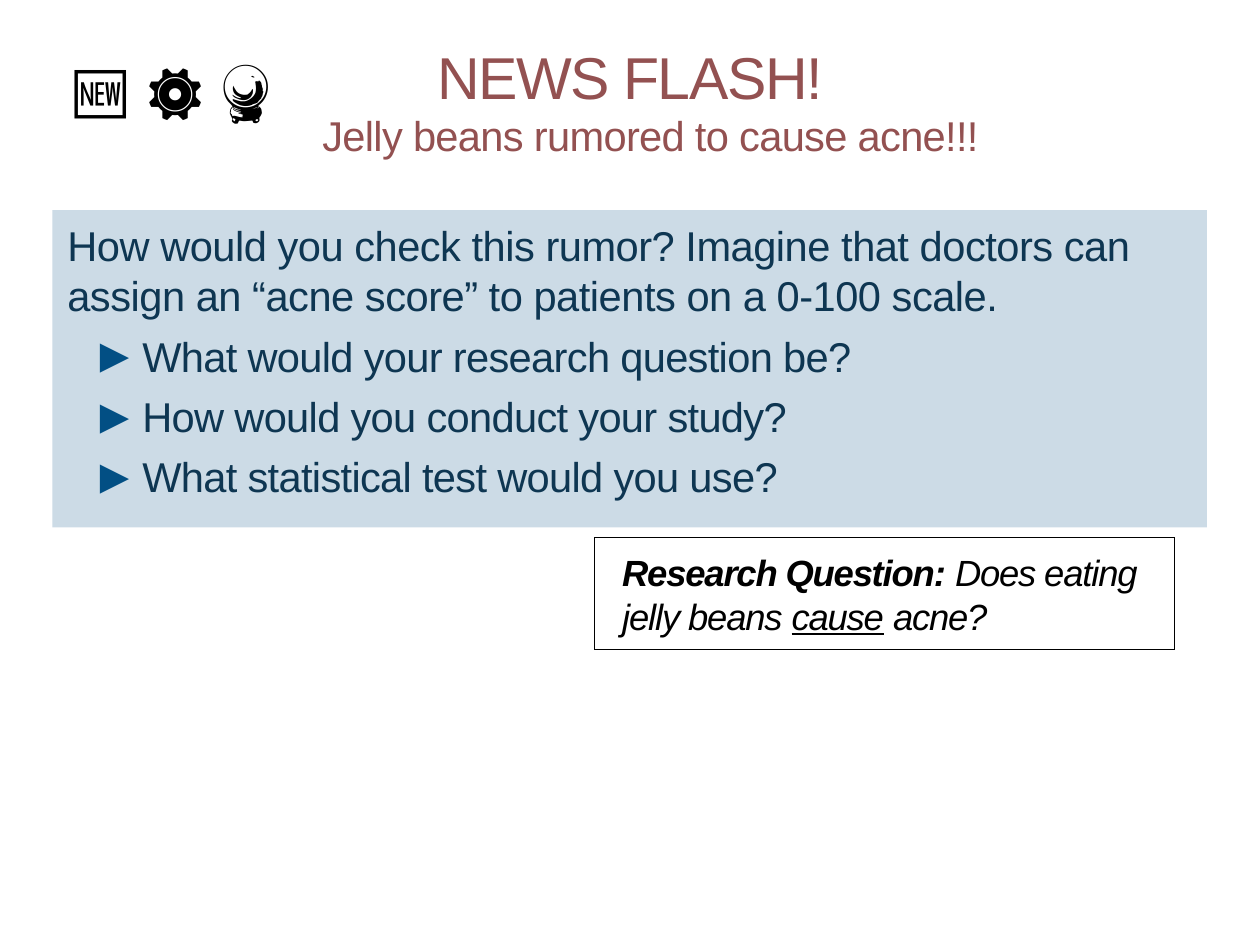
from dataclasses import dataclass

from lxml import etree
from pptx import Presentation
from pptx.dml.color import RGBColor
from pptx.enum.text import MSO_ANCHOR, MSO_AUTO_SIZE, PP_ALIGN
from pptx.oxml.ns import qn
from pptx.util import Inches, Pt

TOP = MSO_ANCHOR.TOP
FIXED_SIZE = MSO_AUTO_SIZE.NONE
LEFT = PP_ALIGN.LEFT
TITLE_AND_CONTENT = 1


@dataclass(frozen=True)
class Theme:
    font: str = "Arial"
    icon_font: str = "Calibri"
    bullet_font: str = "DejaVu Serif"
    heading: str = "935151"
    text: str = "0E3652"
    bullet: str = "024F84"
    panel: str = "CCDBE6"
    black: str = "000000"
    title_size: float = 17
    body_size: float = 12
    icon_size: float = 18
    answer_size: float = 10.5


THEME = Theme()


def place(shape, box):
    shape.left, shape.top, shape.width, shape.height = map(Inches, box)


def prepare_frame(shape, insets, wrap=True):
    frame = shape.text_frame
    frame.word_wrap = wrap
    frame.auto_size = FIXED_SIZE
    frame.vertical_anchor = TOP
    (frame.margin_left, frame.margin_top,
     frame.margin_right, frame.margin_bottom) = map(Inches, insets)
    return frame


def set_indent(para, left, first=0):
    props = para._p.get_or_add_pPr()
    props.set("marL", str(Inches(left)))
    props.set("indent", str(Inches(first)))


def set_bullet(para, symbol=None):
    """Give the paragraph a coloured symbol, or switch its bullet off."""
    props = para._p.get_or_add_pPr()
    if symbol is None:
        etree.SubElement(props, qn("a:buNone"))
        return
    color = etree.SubElement(props, qn("a:buClr"))
    etree.SubElement(color, qn("a:srgbClr"), val=THEME.bullet)
    etree.SubElement(props, qn("a:buSzPct"), val="92000")
    etree.SubElement(props, qn("a:buFont"), typeface=THEME.bullet_font)
    etree.SubElement(props, qn("a:buChar"), char=symbol)


def style(para, size, color, font=THEME.font, line=None, before=0, tracking=0):
    para.alignment = LEFT
    para.line_spacing = Pt(line) if line else 1.0
    para.space_before = Pt(before)
    para.font.name = font
    para.font.size = Pt(size)
    para.font.color.rgb = RGBColor.from_string(color)
    for span in para.runs:
        span._r.get_or_add_rPr().set("spc", str(round(tracking * 100)))


def add_spans(para, *texts):
    for text in texts:
        para.add_run().text = text
    return para.runs


def fill_heading(title, box):
    place(title, box)
    frame = prepare_frame(title, (0, 0.02, 0, 0))
    headline, rumor = frame.paragraphs[0], frame.add_paragraph()
    add_spans(headline, "NEWS FLASH!")
    set_indent(headline, 0.47)
    style(headline, THEME.title_size, THEME.heading, line=19.9, before=1.1, tracking=-0.45)
    add_spans(rumor, "Jelly beans rumored to cause acne!!!")
    set_indent(rumor, 0.01)
    style(rumor, THEME.body_size, THEME.heading, line=13.9, tracking=-0.21)


def fill_questions(body, box, intro, questions):
    place(body, box)
    body.fill.solid()
    body.fill.fore_color.rgb = RGBColor.from_string(THEME.panel)
    frame = prepare_frame(body, (0.06, 0.04, 0.22, 0))
    opening = frame.paragraphs[0]
    add_spans(opening, intro)
    set_indent(opening, 0)
    set_bullet(opening)
    style(opening, THEME.body_size, THEME.text, line=14.4, tracking=-0.15)
    for question in questions:
        para = frame.add_paragraph()
        add_spans(para, question)
        set_indent(para, 0.3, -0.17)
        set_bullet(para, "▶")
        style(para, THEME.body_size, THEME.text, line=14.4, before=3, tracking=-0.2)


def add_icons(page, box):
    icons = page.shapes.add_textbox(*map(Inches, box))
    para = prepare_frame(icons, (0.1, 0.05, 0.1, 0.05), wrap=False).paragraphs[0]
    spans = add_spans(para, "🆕 ", "⚙ ", "🔮")
    style(para, THEME.icon_size, THEME.black, font=THEME.icon_font)
    spans[1].font.name = THEME.font


def add_answer(page, box):
    answer = page.shapes.add_textbox(*map(Inches, box))
    answer.line.color.rgb = RGBColor.from_string(THEME.black)
    para = prepare_frame(answer, (0.11, 0.05, 0.1, 0.05)).paragraphs[0]
    spans = add_spans(para, "Research Question:", " Does eating jelly beans ",
                      "cause", " acne?")
    style(para, THEME.answer_size, THEME.black, line=12.6, tracking=-0.32)
    para.font.italic = True
    spans[0].font.bold = True
    spans[2].font.underline = True


def build_news_page(deck):
    page = deck.slides.add_slide(deck.slide_layouts[TITLE_AND_CONTENT])

    # Heading
    fill_heading(page.shapes.title, (1.28, 0.15, 2.64, 0.5))

    # Question panel
    fill_questions(
        page.placeholders[1], (0.21, 0.84, 4.62, 1.27),
        "How would you check this rumor? Imagine that doctors can "
        "assign an “acne score” to patients on a 0-100 scale.",
        ["What would your research question be?",
         "How would you conduct your study?",
         "What statistical test would you use?"])

    # Icons beside the heading
    add_icons(page, (0.18, 0.15, 1.11, 0.4))

    # Answer box
    add_answer(page, (2.38, 2.15, 2.32, 0.45))


def main():
    deck = Presentation()
    deck.slide_width = Pt(363)
    deck.slide_height = Pt(272.5)
    build_news_page(deck)
    deck.save("out.pptx")


if __name__ == "__main__":
    main()
